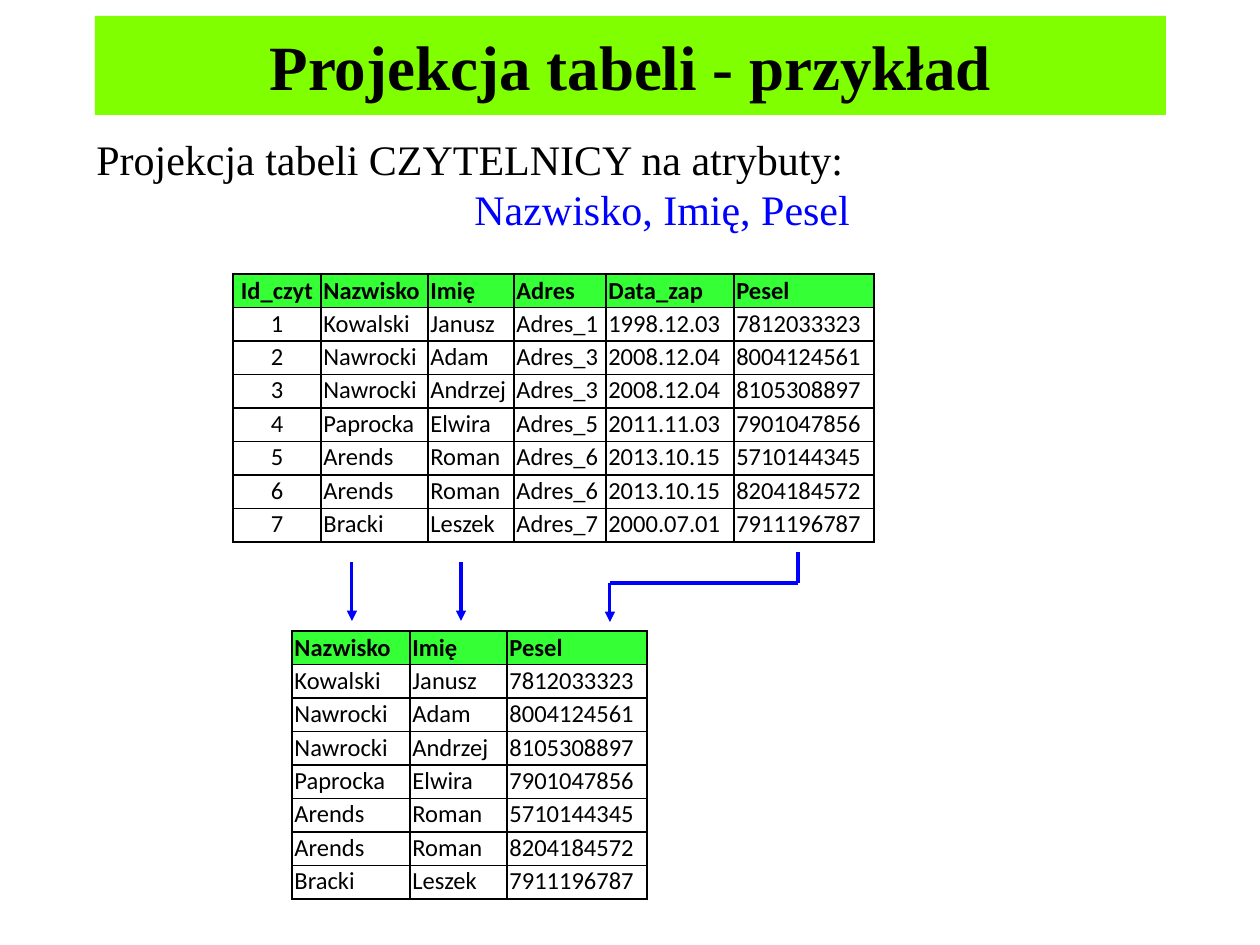
from lxml import etree
from pptx import Presentation
from pptx import util as u
from pptx.dml.color import RGBColor
from pptx.enum import shapes, text
from pptx.oxml.ns import qn

BLACK = RGBColor(0x00, 0x00, 0x00)
BLUE = RGBColor(0x00, 0x00, 0xFF)
LIME = RGBColor(0x7F, 0xFF, 0x00)
GREEN = RGBColor(0x35, 0xFF, 0x35)

HEADER = ["Id_czyt", "Nazwisko", "Imię", "Adres", "Data_zap", "Pesel"]
READERS = [
    ["1", "Kowalski", "Janusz", "Adres_1", "1998.12.03", "7812033323"],
    ["2", "Nawrocki", "Adam", "Adres_3", "2008.12.04", "8004124561"],
    ["3", "Nawrocki", "Andrzej", "Adres_3", "2008.12.04", "8105308897"],
    ["4", "Paprocka", "Elwira", "Adres_5", "2011.11.03", "7901047856"],
    ["5", "Arends", "Roman", "Adres_6", "2013.10.15", "5710144345"],
    ["6", "Arends", "Roman", "Adres_6", "2013.10.15", "8204184572"],
    ["7", "Bracki", "Leszek", "Adres_7", "2000.07.01", "7911196787"],
]
PROJECTED = ["Nazwisko", "Imię", "Pesel"]


def px(n):
    return u.Emu(round(n * u.Inches(1) / 126))


class SlideBuilder:
    serif = "Times New Roman"
    sans = "Calibri"

    def __init__(self, slide):
        self.s = slide

    def run(self, p, words, font, size, color=BLACK, bold=False):
        r = p.add_run()
        r.text = words
        r.font.name = font
        r.font.size = u.Pt(size)
        r.font.bold = bold
        r.font.color.rgb = color

    def banner(self, x, y, w, h, words):
        sp = self.s.shapes.add_shape(
            shapes.MSO_SHAPE.RECTANGLE, px(x), px(y), px(w), px(h))
        sp.shadow.inherit = False
        sp.fill.solid()
        sp.fill.fore_color.rgb = LIME
        sp.line.fill.background()
        sp.text_frame.vertical_anchor = text.MSO_ANCHOR.MIDDLE
        p = sp.text_frame.paragraphs[0]
        p.alignment = text.PP_ALIGN.CENTER
        self.run(p, words, self.serif, 36, bold=True)

    def body(self, x, y, w, h, lines):
        """Each line is (words, colour, left indent, space before in points)."""
        tf = self.s.shapes.add_textbox(px(x), px(y), px(w), px(h)).text_frame
        tf.word_wrap = True
        for i, (words, color, indent, before) in enumerate(lines):
            p = tf.add_paragraph() if i else tf.paragraphs[0]
            p.space_before = u.Pt(before)
            p._p.get_or_add_pPr().set("marL", str(px(indent)))
            self.run(p, words, self.serif, 24, color)

    def border(self, cell):
        tc_pr = cell._tc.get_or_add_tcPr()
        for side in ("a:lnL", "a:lnR", "a:lnT", "a:lnB"):
            ln = etree.SubElement(tc_pr, qn(side), w=str(u.Pt(1)))
            fill = etree.SubElement(ln, qn("a:solidFill"))
            etree.SubElement(fill, qn("a:srgbClr"), val=str(BLACK))

    def table(self, x, y, widths, h, rows, centred=()):
        table = self.s.shapes.add_table(
            len(rows), len(widths), px(x), px(y), px(sum(widths)), px(h)).table
        table.first_row = table.horz_banding = False
        for col, width in zip(table.columns, widths):
            col.width = px(width)
        for i, row in enumerate(rows):
            table.rows[i].height = px(h / len(rows))
            for j, words in enumerate(row):
                cell = table.cell(i, j)
                cell.margin_left = cell.margin_right = u.Inches(0.02)
                cell.margin_top, cell.margin_bottom = u.Inches(0.01), 0
                self.border(cell)
                if i == 0:
                    cell.vertical_anchor = text.MSO_ANCHOR.MIDDLE
                    cell.fill.solid()
                    cell.fill.fore_color.rgb = GREEN
                else:
                    cell.fill.background()
                p = cell.text_frame.paragraphs[0]
                if j in centred:
                    p.alignment = text.PP_ALIGN.CENTER
                self.run(p, words, self.sans, 14, bold=i == 0)

    def line(self, x1, y1, x2, y2, arrow=False, group=None):
        c = (group or self.s).shapes.add_connector(
            shapes.MSO_CONNECTOR.STRAIGHT, px(x1), px(y1), px(x2), px(y2))
        c.line.color.rgb = BLUE
        c.line.width = u.Pt(1.75)
        if arrow:
            etree.SubElement(c.line._get_or_add_ln(), qn("a:tailEnd"),
                             type="triangle")
        etree.SubElement(c._element.spPr, qn("a:effectLst"))

    def bent_arrow(self, x1, y1, bend_y, x2, y2):
        group = self.s.shapes.add_group_shape()
        self.line(x1, y1, x1, bend_y, group=group)
        self.line(x2, bend_y, x2, y2, arrow=True, group=group)
        self.line(x2, bend_y, x1, bend_y, group=group)


def main():
    prs = Presentation()
    prs.slide_width, prs.slide_height = u.Inches(10), u.Inches(7.5)
    b = SlideBuilder(prs.slides.add_slide(prs.slide_layouts[6]))

    # Title and introduction
    b.banner(95, 16, 1071, 99, "Projekcja tabeli - przykład")
    b.body(84, 127, 1102, 117, [
        ("Projekcja tabeli CZYTELNICY na atrybuty:", BLACK, 0, 4.8),
        (", ".join(PROJECTED), BLUE, 378, 0),
    ])

    # Source table and its projection
    rows = [HEADER] + READERS
    kept = [HEADER.index(name) for name in PROJECTED]
    b.table(233, 274, [88, 107, 86, 92, 128, 140], 268, rows, centred=(0,))
    b.table(292, 631, [118, 97, 140], 268,
            [[row[j] for j in kept] for row in rows])

    # Arrows from the kept columns
    for x in (352, 461):
        b.line(x, 562, x, 621, arrow=True)
    b.bent_arrow(798, 552, 583, 610, 622)

    prs.save("out.pptx")


if __name__ == "__main__":
    main()
